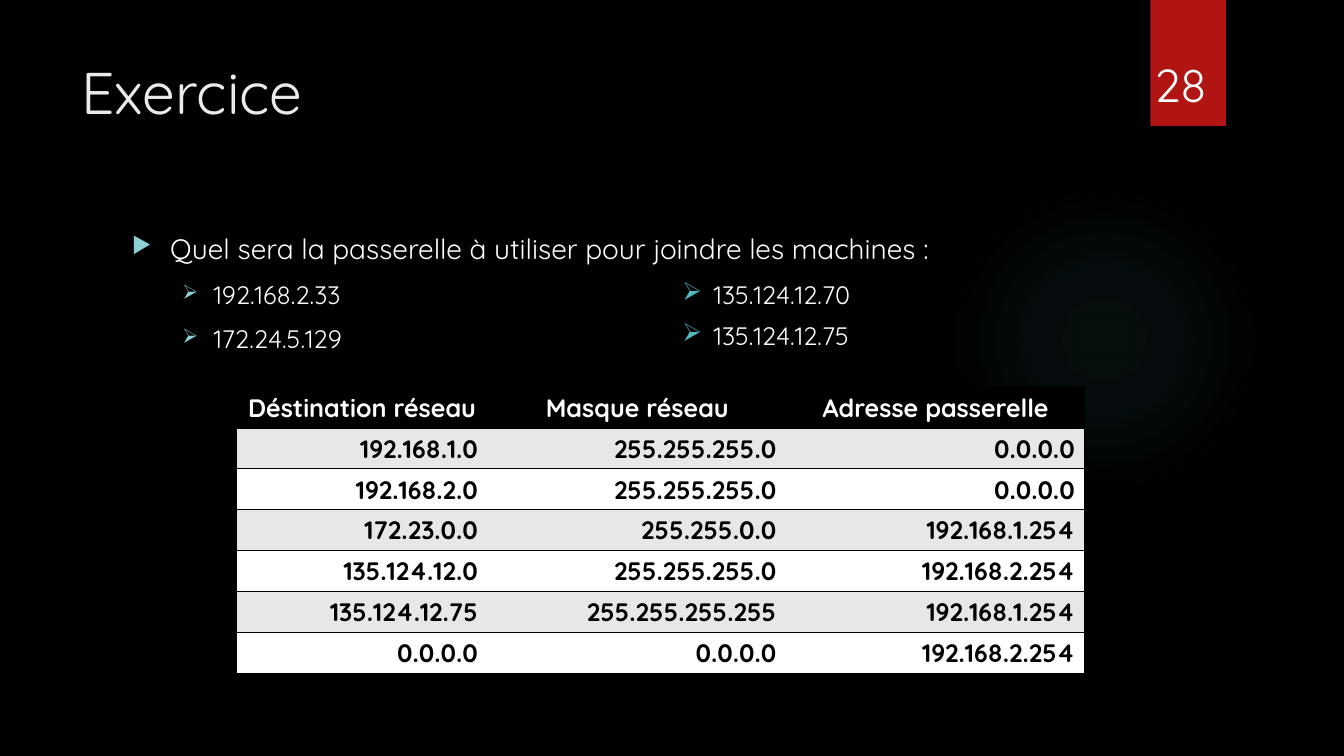
from pptx import Presentation
from pptx.dml.color import RGBColor
from pptx.enum.shapes import MSO_SHAPE
from pptx.enum.text import PP_ALIGN
from pptx.oxml import parse_xml
from pptx.oxml.ns import nsdecls
from pptx.util import Inches, Pt

FONT = "Quicksand"
WHITE, BLACK, GREY = "FFFFFF", "000000", "E7E7E7"
RED, TEAL, AQUA = "B01513", "50B9C1", "8AD0D6"

ROUTES = [
    ("Déstination réseau", "Masque réseau", "Adresse passerelle"),
    ("192.168.1.0", "255.255.255.0", "0.0.0.0"),
    ("192.168.2.0", "255.255.255.0", "0.0.0.0"),
    ("172.23.0.0", "255.255.0.0", "192.168.1.254"),
    ("135.124.12.0", "255.255.255.0", "192.168.2.254"),
    ("135.124.12.75", "255.255.255.255", "192.168.1.254"),
    ("0.0.0.0", "0.0.0.0", "192.168.2.254"),
]


def color(code):
    return RGBColor.from_string(code)


def paint(fill, code):
    fill.solid()
    fill.fore_color.rgb = color(code)


def xml(tag, body):
    return parse_xml(f"<a:{tag} {nsdecls('a')} {body}")


def style(par, size, code=WHITE, bold=False):
    for run in par.runs:
        font = run.font
        font.name, font.size, font.bold = FONT, Pt(size), bold
        font.color.rgb = color(code)


def add_bullet(par, char, code, left, hang, scale=100):
    props = par._p.get_or_add_pPr()
    props.set("marL", str(Inches(left)))
    props.set("indent", str(-Inches(hang)))
    props.append(xml("buClr", f'><a:srgbClr val="{code}"/></a:buClr>'))
    props.append(xml("buSzPct", f'val="{scale * 1000}"/>'))
    props.append(xml("buChar", f'char="{char}"/>'))


def add_text(slide, box, text, size):
    frame = slide.shapes.add_textbox(*map(Inches, box)).text_frame
    frame.word_wrap = True
    frame.text = text
    for par in frame.paragraphs:
        style(par, size)
    return frame.paragraphs


def add_shape(slide, kind, box):
    shape = slide.shapes.add_shape(kind, *map(Inches, box))
    shape.shadow.inherit = False
    shape.line.fill.background()
    return shape


def add_glow(slide):
    """Add a faint disc that fades out from its centre."""
    disc = add_shape(slide, MSO_SHAPE.OVAL, (9.41, 1.83, 3.08, 3.08))
    stops = "".join(
        f'<a:gs pos="{pos * 1000}"><a:srgbClr val="{TEAL}">'
        f'<a:alpha val="{alpha * 1000}"/></a:srgbClr></a:gs>'
        for pos, alpha in ((0, 7), (36, 6), (69, 0)))
    grad = xml("gradFill", f'><a:gsLst>{stops}</a:gsLst><a:path path="circle">'
               '<a:fillToRect l="50000" t="50000" r="50000" b="50000"/>'
               '</a:path></a:gradFill>')
    disc._element.spPr.find("{*}prstGeom").addnext(grad)


def add_edges(cell, shown):
    """Rule the sides in shown in black and clear the others."""
    props = cell._tc.get_or_add_tcPr()
    for place, side in enumerate("LRTB"):
        fill = (f'<a:solidFill><a:srgbClr val="{BLACK}"/></a:solidFill>'
                if side in shown else "<a:noFill/>")
        props.insert(place, xml(f"ln{side}", f'w="12700">{fill}</a:ln{side}>'))


def add_routes(slide):
    last = len(ROUTES[0]) - 1
    table = slide.shapes.add_table(
        len(ROUTES), last + 1, *map(Inches, (2.34, 3.84, 8.42, 2.84))).table
    for col, width in zip(table.columns, (2.5, 2.96, 2.96)):
        col.width = Inches(width)
    for r, route in enumerate(ROUTES):
        for c, text in enumerate(route):
            cell = table.cell(r, c)
            cell.text = text
            par = cell.text_frame.paragraphs[0]
            par.alignment = PP_ALIGN.RIGHT if r else PP_ALIGN.CENTER
            style(par, 18, BLACK if r else WHITE, True)
            paint(cell.fill, (GREY if r % 2 else WHITE) if r else BLACK)
            add_edges(cell, "TB" + "L" * (c == 0) + "R" * (c == last))


def add_task(slide):
    first, *hosts = add_text(
        slide, (1.21, 2.25, 9.78, 1.5),
        "Quel sera la passerelle à utiliser pour joindre les machines :\n"
        "192.168.2.33\n172.24.5.129", 20)
    add_bullet(first, "▶", AQUA, 0.38, 0.38, 80)
    for host in hosts:
        host.level = 1
        add_bullet(host, "➢", AQUA, 0.81, 0.31, 80)
        host.space_before = Pt(10)
        style(host, 18)
    for top, text in ((2.72, "135.124.12.70"), (3.13, "135.124.12.75")):
        host, = add_text(slide, (6.67, top, 2.78, 0.71), text, 18)
        add_bullet(host, "➢", TEAL, 0.31, 0.31)


def main():
    deck = Presentation()
    deck.slide_width, deck.slide_height = Inches(13.33), Inches(7.5)
    slide = deck.slides.add_slide(deck.slide_layouts[6])
    paint(slide.background.fill, BLACK)
    add_glow(slide)
    flag = add_shape(slide, MSO_SHAPE.RECTANGLE, (11.41, 0, 0.75, 1.25))
    paint(flag.fill, RED)
    add_text(slide, (0.71, 0.5, 10.29, 1.53), "Exercice", 42)
    title = slide.shapes[-1].text_frame.paragraphs[0]
    style(title, 42, "EBEBEB")
    add_task(slide)
    add_routes(slide)
    add_text(slide, (11.35, 0.51, 0.78, 0.66), "28", 33)
    deck.save("out.pptx")


if __name__ == "__main__":
    main()
